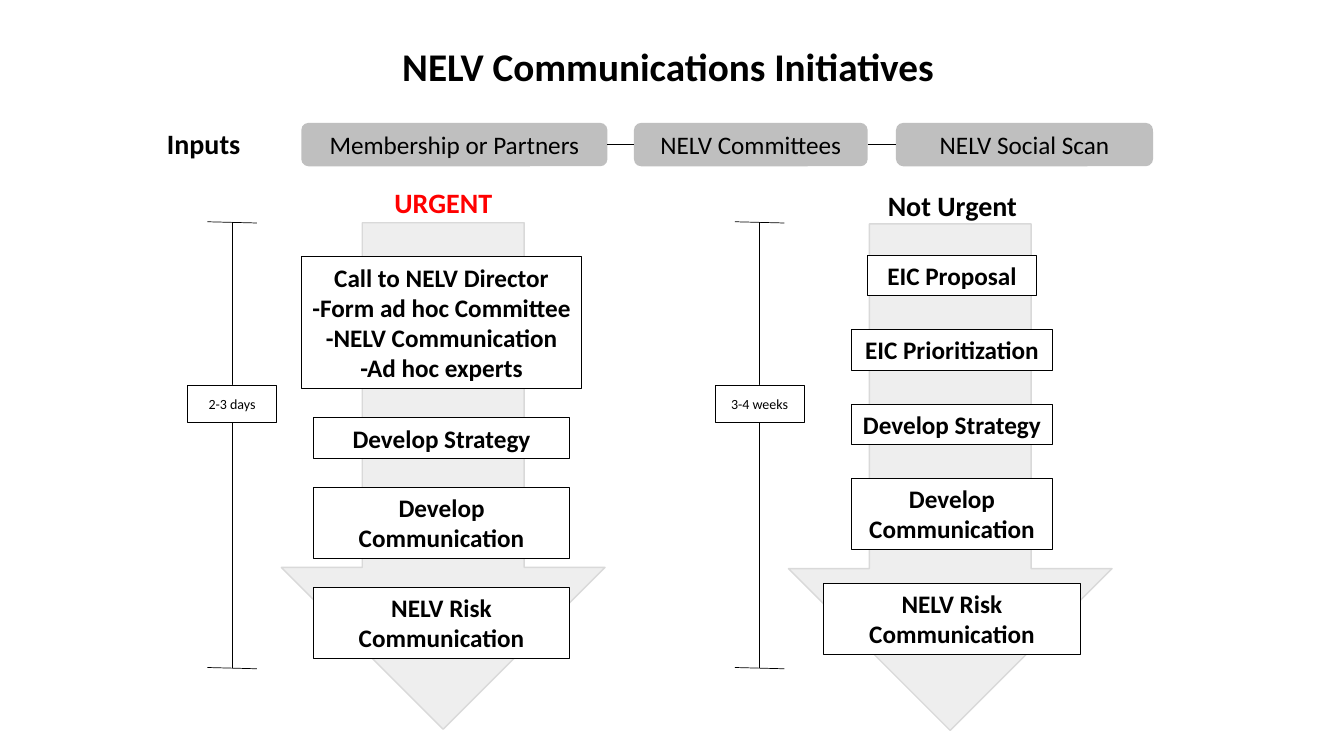
from lxml import etree
from pptx import Presentation
from pptx.dml.color import RGBColor
from pptx.enum.shapes import MSO_CONNECTOR, MSO_SHAPE as SHAPE
from pptx.enum.text import MSO_ANCHOR as ANCHOR, MSO_AUTO_SIZE as FIT, PP_ALIGN
from pptx.oxml.ns import qn
from pptx.util import Pt

BLACK, WHITE, GRAY, PALE, RED = "000000", "FFFFFF", "BFBFBF", "D9D9D9", "FF0000"
STEP_TOP_URGENT, STEP_TOP_REGULAR = 183.5, 182.2
LINE_HEIGHT = 21.8


def rgb(hex_color):
    return RGBColor.from_string(hex_color)


def write(sp, lines, size, color=BLACK, bold=False, spacing=None):
    tf = sp.text_frame
    tf.word_wrap = True
    for i, line in enumerate(lines):
        p = tf.paragraphs[0] if i == 0 else tf.add_paragraph()
        p.alignment = PP_ALIGN.CENTER
        if spacing:
            p.line_spacing = spacing
        r = p.add_run()
        r.text = line
        r.font.name = "Calibri"
        r.font.size = Pt(size)
        r.font.bold = bold
        r.font.color.rgb = rgb(color)
    return tf


def add_box(s, kind, left, top, width, height, fill, line=None, weight=0.75):
    sp = s.shapes.add_shape(kind, Pt(left), Pt(top), Pt(width), Pt(height))
    sp.shadow.inherit = False
    sp.fill.solid()
    sp.fill.fore_color.rgb = rgb(fill)
    if line:
        sp.line.color.rgb = rgb(line)
        sp.line.width = Pt(weight)
    else:
        sp.line.fill.background()
    return sp


def add_line(s, x1, y1, x2, y2):
    cx = s.shapes.add_connector(MSO_CONNECTOR.STRAIGHT, Pt(x1), Pt(y1), Pt(x2), Pt(y2))
    cx.line.color.rgb = rgb(BLACK)
    cx.line.width = Pt(0.5)
    etree.SubElement(cx._element.spPr, qn("a:effectLst"))


def add_heading(s, text, left, top, width=121, height=26.6, size=20, color=BLACK):
    sp = s.shapes.add_textbox(Pt(left), Pt(top), Pt(width), Pt(height))
    write(sp, [text], size, color, bold=True, spacing=0.9)


def add_flow_arrow(s, left, top):
    sp = add_box(s, SHAPE.DOWN_ARROW, left, top, 231.2, 361.8, GRAY, PALE, 1)
    color = sp._element.spPr.find(qn("a:solidFill"))[0]
    etree.SubElement(color, qn("a:alpha"), val="26000")


def add_inputs(s, inputs, top=87.8, height=31):
    """Rounded boxes in a row, each joined to the next by a line."""
    previous_right = None
    for text, left, width in inputs:
        sp = add_box(s, SHAPE.ROUNDED_RECTANGLE, left, top, width, height, GRAY)
        write(sp, [text], 18).vertical_anchor = ANCHOR.MIDDLE
        if previous_right:
            add_line(s, previous_right, top + height / 2, left, top + height / 2)
        previous_right = left + width


def add_steps(s, center, top, gap, steps):
    """Stack boxes downwards; a step is its paragraphs, width and line count."""
    for lines, width, rows in steps:
        height = 7.2 + rows * LINE_HEIGHT
        sp = add_box(s, SHAPE.RECTANGLE, center - width / 2, top, width, height, WHITE, BLACK)
        tf = write(sp, lines, 18, bold=True)
        tf.vertical_anchor = ANCHOR.TOP
        tf.auto_size = FIT.SHAPE_TO_FIT_TEXT
        top += height + gap


def add_duration(s, center, text, top=158.4, bottom=476.8):
    """Vertical span with end ticks and a label in the middle."""
    add_line(s, center, top, center, bottom)
    for y in (top, bottom):
        add_line(s, center - 17.7, y, center + 17.7, y + 0.9)
    sp = add_box(s, SHAPE.RECTANGLE, center - 31.8, 275, 63.5, 26.6, WHITE, BLACK, 0.5)
    write(sp, [text], 10).vertical_anchor = ANCHOR.MIDDLE


def main():
    prs = Presentation()
    prs.slide_width, prs.slide_height = Pt(960), Pt(540)
    s = prs.slides.add_slide(prs.slide_layouts[6])

    add_flow_arrow(s, 201, 159.1)
    add_flow_arrow(s, 563.2, 160)

    add_heading(s, "NELV Communications Initiatives ", 183.6, 30.8, 593.3, 59, 28)
    add_heading(s, "Inputs", 85, 89.8)
    add_heading(s, "URGENT", 256.2, 131.8, color=RED)
    add_heading(s, "Not Urgent", 619.8, 134)

    add_inputs(s, [
        ("Membership or Partners", 215.2, 218.7),
        ("NELV Committees", 452.8, 167),
        ("NELV Social Scan", 640, 183.6),
    ])

    add_steps(s, 315.4, STEP_TOP_URGENT, 20.6, [
        (["Call to NELV Director", "-Form ad hoc Committee",
          "-NELV Communication", "-Ad hoc experts"], 200.2, 4),
        (["Develop Strategy"], 183, 1),
        (["Develop Communication"], 183, 2),
        (["NELV Risk Communication"], 183, 2),
    ])
    add_steps(s, 680, STEP_TOP_REGULAR, 24.2, [
        (["EIC Proposal"], 121, 1),
        (["EIC Prioritization"], 144, 1),
        (["Develop Strategy"], 144, 1),
        (["Develop Communication"], 144, 2),
        (["NELV Risk Communication"], 183, 2),
    ])

    add_duration(s, 165.8, "2-3 days")
    add_duration(s, 542.6, "3-4 weeks")

    prs.save("out.pptx")


if __name__ == "__main__":
    main()
